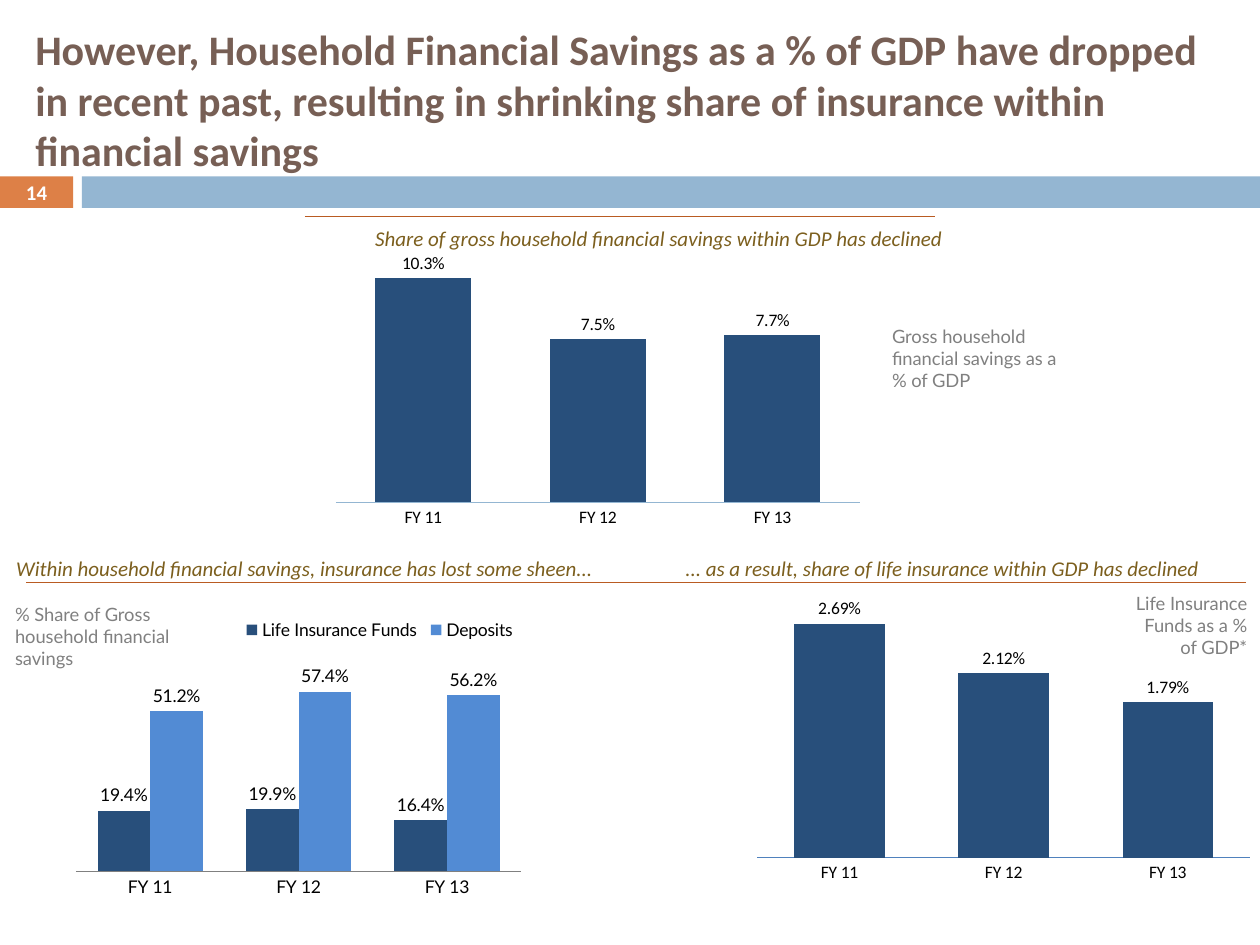
"""Build a slide on the falling share of household savings and insurance in GDP."""
from pptx import Presentation
from pptx.chart.data import CategoryChartData
from pptx.dml.color import RGBColor
from pptx.enum.chart import XL_CHART_TYPE, XL_LABEL_POSITION, XL_LEGEND_POSITION, XL_TICK_MARK
from pptx.enum.shapes import MSO_CONNECTOR, MSO_SHAPE
from pptx.enum.text import MSO_ANCHOR, MSO_AUTO_SIZE, PP_ALIGN
from pptx.oxml import parse_xml
from pptx.oxml.ns import nsdecls
from pptx.util import Inches, Pt

COLUMN = XL_CHART_TYPE.COLUMN_CLUSTERED
OUTSIDE = XL_LABEL_POSITION.OUTSIDE_END
TOP_LEGEND = XL_LEGEND_POSITION.TOP
NO_TICK = XL_TICK_MARK.NONE
STRAIGHT = MSO_CONNECTOR.STRAIGHT
RECTANGLE, NOTE = MSO_SHAPE.RECTANGLE, MSO_SHAPE.ROUND_1_RECTANGLE
TOP, MIDDLE = MSO_ANCHOR.TOP, MSO_ANCHOR.MIDDLE
NO_FIT, GROW = MSO_AUTO_SIZE.NONE, MSO_AUTO_SIZE.SHAPE_TO_FIT_TEXT
LEFT, CENTER, RIGHT = PP_ALIGN.LEFT, PP_ALIGN.CENTER, PP_ALIGN.RIGHT

BROWN = RGBColor(0x77, 0x5F, 0x55)
GOLD = RGBColor(0x7C, 0x5F, 0x1E)
ORANGE = RGBColor(0xDD, 0x80, 0x47)
RUST = RGBColor(0xB9, 0x5B, 0x22)
PALE_BLUE = RGBColor(0x94, 0xB6, 0xD2)
AXIS_BLUE = RGBColor(0x4F, 0x81, 0xBD)
NAVY = RGBColor(0x28, 0x4F, 0x7B)
SKY = RGBColor(0x52, 0x8B, 0xD4)
GRAY = RGBColor(0x80, 0x80, 0x80)
BLACK = RGBColor(0, 0, 0)
WHITE = RGBColor(0xFF, 0xFF, 0xFF)

YEARS = ("FY 11", "FY 12", "FY 13")
GRID = 0.1


def write(box, text, size=12, color=BLACK, font="Calibri", bold=False, italic=False,
          align=LEFT, anchor=TOP, fit=NO_FIT):
    """Write one formatted paragraph into a shape and return it."""
    frame = box.text_frame
    frame.word_wrap = True
    frame.auto_size = fit
    frame.vertical_anchor = anchor
    para = frame.paragraphs[0]
    para.alignment = align
    span = para.add_run()
    span.text = text
    span.font.name, span.font.size = font, Pt(size)
    span.font.bold, span.font.italic = bold, italic
    span.font.color.rgb = color
    return para


class Page:
    """Hold the slide and its style; places are in grid columns and rows."""

    def __init__(self, deck):
        self.slide = deck.slides.add_slide(deck.slide_layouts[5])
        self.shapes = self.slide.shapes

    def place(self, *cells):
        """Turn grid cells into lengths."""
        return [Inches(cell * GRID) for cell in cells]

    def title(self, text, *cells):
        """Move and fill the title placeholder."""
        box = self.shapes.title
        box.left, box.top, box.width, box.height = self.place(*cells)
        write(box, text, 24, BROWN, bold=True, anchor=MIDDLE)

    def band(self, color, *cells):
        """Add a plain filled bar."""
        bar = self.shapes.add_shape(RECTANGLE, *self.place(*cells))
        bar.shadow.inherit = False
        bar.fill.solid()
        bar.fill.fore_color.rgb = color
        bar.line.fill.background()

    def number(self, text, *cells):
        """Add the slide number."""
        box = self.shapes.add_textbox(*self.place(*cells))
        write(box, text, 11.9, WHITE, bold=True, align=CENTER, anchor=MIDDLE)

    def heading(self, text, *cells, align=LEFT):
        """Add an italic chart heading."""
        box = self.shapes.add_textbox(*self.place(*cells))
        para = write(box, text, 12, GOLD, italic=True, align=align, fit=GROW)
        para.line_spacing = 1.2
        para.space_after = Pt(1)

    def note(self, text, *cells, align=LEFT):
        """Add a gray note that names the measure."""
        box = self.shapes.add_shape(NOTE, *self.place(*cells))
        box.adjustments[0] = 0
        box.shadow.inherit = False
        box.fill.background()
        box.line.fill.background()
        frame = box.text_frame
        frame.margin_left = Inches(0.08)
        frame.margin_top = frame.margin_right = frame.margin_bottom = Inches(0.04)
        write(box, text, 10.5, GRAY, "Lato", align=align, anchor=MIDDLE)

    def rule(self, left, right, row):
        """Add a thin horizontal rule."""
        line = self.shapes.add_connector(STRAIGHT, *self.place(left, row, right, row))
        line.line.color.rgb = RUST
        line.line.width = Pt(0.5)
        line._element.spPr.append(parse_xml(f"<a:effectLst {nsdecls('a')}/>"))

    def columns(self, series, *cells, number_format, top, axis_color, font="Calibri"):
        """Add a column chart; series maps names to values and colour."""
        data = CategoryChartData(number_format)
        data.categories = YEARS
        for name, (values, _) in series.items():
            data.add_series(name, values)
        chart = self.shapes.add_chart(COLUMN, *self.place(*cells), data).chart
        chart.has_title = False
        chart.font.name, chart.font.size = font, Pt(10)
        chart.font.color.rgb = BLACK
        values_axis, years_axis = chart.value_axis, chart.category_axis
        values_axis.visible = False
        values_axis.has_major_gridlines = False
        values_axis.minimum_scale, values_axis.maximum_scale = 0, top
        values_axis.tick_labels.number_format = number_format
        values_axis.tick_labels.number_format_is_linked = False
        years_axis.major_tick_mark = NO_TICK
        years_axis.format.line.color.rgb = axis_color
        years_axis.format.line.width = Pt(0.75)
        plot = chart.plots[0]
        plot.gap_width, plot.overlap = 82, 0
        plot.vary_by_categories = False
        for bars, (_, color) in zip(plot.series, series.values()):
            bars.format.fill.solid()
            bars.format.fill.fore_color.rgb = color
            bars.invert_if_negative = False
            labels = bars.data_labels
            labels.show_value = True
            labels.number_format = number_format
            labels.number_format_is_linked = False
            labels.position = OUTSIDE
        chart.has_legend = len(series) > 1
        if chart.has_legend:
            self.legend(chart.legend)

    def legend(self, legend):
        """Put the legend at the upper right of its chart."""
        legend.position = TOP_LEGEND
        legend.include_in_layout = False
        legend._element.legendPos.addnext(parse_xml(
            f"<c:layout {nsdecls('c')}><c:manualLayout>"
            '<c:xMode val="edge"/><c:yMode val="edge"/>'
            '<c:x val="0.37"/><c:y val="0.03"/><c:w val="0.61"/><c:h val="0.1"/>'
            "</c:manualLayout></c:layout>"))


def main():
    """Build and save the deck."""
    deck = Presentation()
    deck.slide_width, deck.slide_height = Inches(10), Inches(7.5)
    page = Page(deck)
    page.band(ORANGE, 0, 14, 5.8, 2.5)
    page.band(PALE_BLUE, 6.5, 14, 93.5, 2.5)
    page.title("However, Household Financial Savings as a % of GDP have dropped in recent past, "
               "resulting in shrinking share of insurance within financial savings",
               1.8, 2.5, 95.9, 10.8)

    page.note("Gross household financial savings as a % of GDP", 70, 24.5, 14.3, 7.9)
    page.columns({"Series 1": ((0.103, 0.075, 0.077), NAVY)}, 25.8, 18.7, 43.3, 23.6,
                 number_format="0.0%", top=0.12, axis_color=PALE_BLUE)
    page.heading("Share of gross household financial savings within GDP has declined",
                 18.2, 17, 57.6, 3.3, align=RIGHT)

    page.note("% Share of Gross household financial savings", 0.4, 47.7, 15.4, 5.6)
    page.columns({"Life Insurance Funds": ((0.194, 0.199, 0.164), NAVY),
                  "Deposits": ((0.512, 0.574, 0.562), SKY)}, 5.3, 48.1, 36.8, 23.6,
                 number_format="0.0%", top=0.7, axis_color=GRAY, font="Lato")
    page.heading("Within household financial savings, insurance has lost some sheen...",
                 0.3, 43.2, 52.6, 3.4)

    page.note("Life Insurance Funds as a % of GDP*", 88.8, 47.4, 10.6, 4.4, align=RIGHT)
    page.columns({"Series 1": ((0.0269, 0.0212, 0.0179), NAVY)}, 59.3, 46.9, 40.7, 23.6,
                 number_format="0.00%", top=0.03, axis_color=AXIS_BLUE)
    page.heading("... as a result, share of life insurance within GDP has declined",
                 53.4, 43.2, 47.9, 3.4)

    page.rule(2.1, 98.9, 46.2)
    page.rule(24.2, 74.2, 17.2)
    page.number("14", 0, 13.9, 5.8, 2.7)
    deck.save("out.pptx")


if __name__ == "__main__":
    main()
